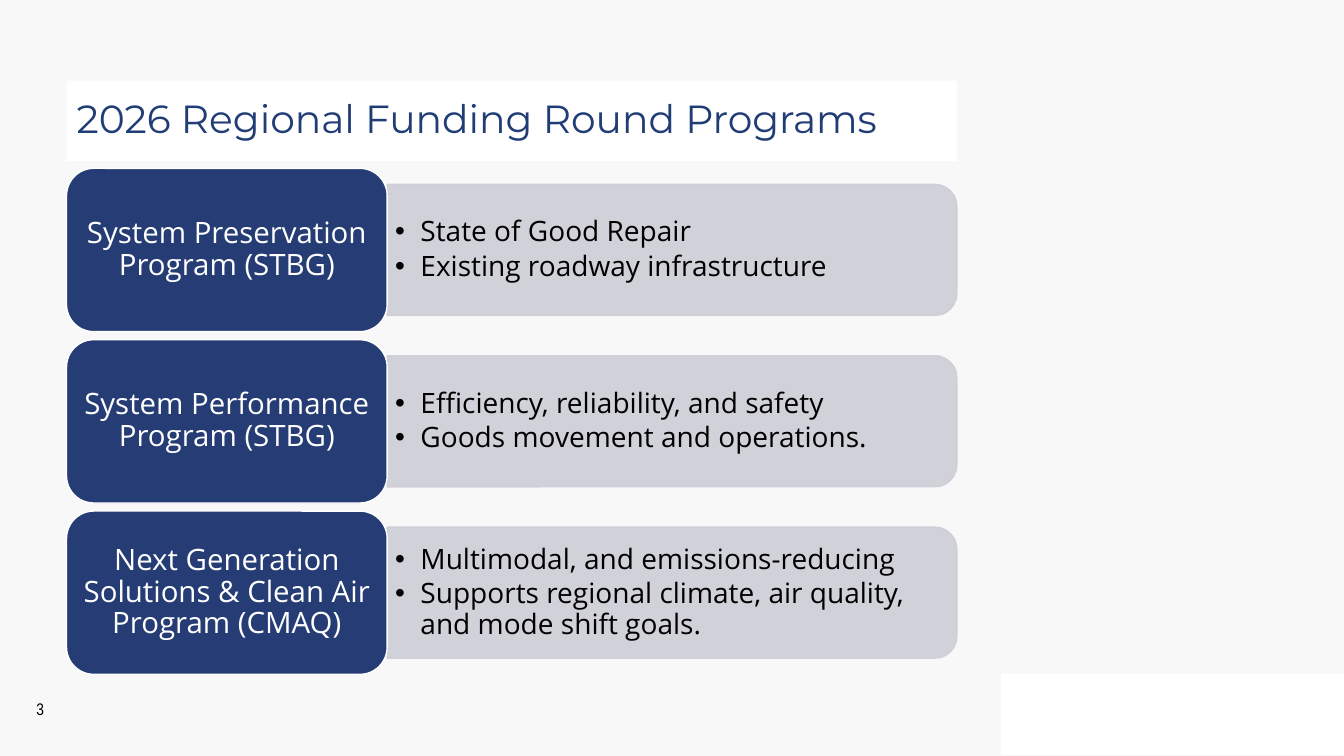
from lxml.etree import SubElement
from pptx import Presentation
from pptx.dml.color import RGBColor
from pptx.enum.shapes import MSO_SHAPE
from pptx.enum.text import MSO_ANCHOR, MSO_AUTO_SIZE, PP_ALIGN
from pptx.oxml.ns import qn
from pptx.util import Inches, Pt

COLORS = {
    "back": "F8F8F8",
    "white": "FFFFFF",
    "black": "000000",
    "title": "213D75",
    "label": "263C74",
    "bar": "CDCED6",
}
FONTS = {
    "title": {"name": "Montserrat", "size": Pt(28), "bold": False},
    "label": {"name": "Open Sans", "size": Pt(21), "bold": False},
    "list": {"name": "Open Sans", "size": Pt(20), "bold": False},
    "number": {"name": "Arial Narrow", "size": Pt(12), "bold": False},
}
PARAGRAPHS = {
    "title": {"alignment": PP_ALIGN.LEFT, "line_spacing": 0.9},
    "label": {"alignment": PP_ALIGN.CENTER, "line_spacing": 0.9},
    "list": {"alignment": PP_ALIGN.LEFT, "line_spacing": 0.9,
             "space_before": Pt(0), "space_after": Pt(3)},
    "number": {"alignment": PP_ALIGN.CENTER},
}
PROGRAMS = [
    ("System Preservation Program (STBG)",
     ["State of Good Repair", "Existing roadway infrastructure"]),
    ("System Performance Program (STBG)",
     ["Efficiency, reliability, and safety", "Goods movement and operations."]),
    ("Next Generation Solutions & Clean Air Program (CMAQ)",
     ["Multimodal, and emissions-reducing",
      "Supports regional climate, air quality, and mode shift goals."]),
]

# Layout in inches
LEFT, LABEL_W, LABEL_H = 0.66, 3.18, 1.62
BAR_W, BAR_H = 5.65, 1.3
LIST_W, LIST_H = 5.59, 1.17
FIRST_TOP, STEP = 1.67, 1.7


def apply(obj, values):
    for name, value in values.items():
        setattr(obj, name, value)


def rgb(name):
    return RGBColor.from_string(COLORS[name])


def set_alpha(fill, percent):
    """Make every solid colour below the given element translucent."""
    for clr in fill.iter(qn("a:srgbClr")):
        SubElement(clr, qn("a:alpha"), val=str(percent * 1000))


class SlideBuilder:
    def __init__(self, prs, layout):
        self.s = prs.slides.add_slide(prs.slide_layouts[layout])
        self.s.background.fill.solid()
        self.s.background.fill.fore_color.rgb = rgb("back")

    def place(self, sp, box):
        apply(sp, dict(zip(("left", "top", "width", "height"), map(Inches, box))))

    def frame(self, sp, inset=(0.1, 0.05)):
        x, y = map(Inches, inset)
        tf = sp.text_frame
        apply(tf, {"word_wrap": True, "auto_size": MSO_AUTO_SIZE.NONE,
                   "vertical_anchor": MSO_ANCHOR.MIDDLE,
                   "margin_left": x, "margin_right": x,
                   "margin_top": y, "margin_bottom": y})
        return tf

    def add_text(self, p, text, style, color):
        apply(p, PARAGRAPHS[style])
        r = p.add_run()
        r.text = text
        apply(r.font, FONTS[style])
        r.font.color.rgb = rgb(color)
        return r

    def shape(self, kind, box, fill, line=None):
        sp = self.s.shapes.add_shape(kind, *map(Inches, box))
        sp.shadow.inherit = False
        sp.fill.solid()
        sp.fill.fore_color.rgb = rgb(fill)
        if line:
            sp.line.color.rgb = rgb(line)
            sp.line.width = Pt(1)
        else:
            sp.line.fill.background()
        return sp

    def title(self, text, box):
        sp = self.s.shapes.title
        self.place(sp, box)
        sp.fill.solid()
        sp.fill.fore_color.rgb = rgb("white")
        self.add_text(self.frame(sp).paragraphs[0], text, "title", "title")

    def number(self, text, box):
        sp = self.s.shapes.add_textbox(*map(Inches, box))
        r = self.add_text(self.frame(sp).paragraphs[0], text, "number", "black")
        # Turn the run into a slide number field
        run = r._r
        run.tag = qn("a:fld")
        run.set("id", "{B6F15528-21DE-4FAA-801E-634DDDAF4B2B}")
        run.set("type", "slidenum")

    def bar(self, box):
        """Bar with rounded right corners: a top-rounded shape turned by 90 degrees."""
        x, y, w, h = box
        turned = (x + (w - h) / 2, y + (h - w) / 2, h, w)
        sp = self.shape(MSO_SHAPE.ROUND_2_SAME_RECTANGLE, turned, "bar", "bar")
        sp.rotation = 90
        set_alpha(sp._element.spPr, 90)

    def label(self, text, box):
        sp = self.shape(MSO_SHAPE.ROUNDED_RECTANGLE, box, "label", "white")
        tf = self.frame(sp, (0.09, 0.04))
        self.add_text(tf.paragraphs[0], text, "label", "white")

    def bullets(self, idx, items, box):
        sp = self.s.placeholders[idx]
        sp._element.getparent().append(sp._element)  # bring in front of the bar
        self.place(sp, box)
        tf = self.frame(sp, (0.08, 0.04))
        for i, item in enumerate(items):
            p = tf.add_paragraph() if i else tf.paragraphs[0]
            pPr = p._p.get_or_add_pPr()
            pPr.set("marL", str(Inches(0.25)))
            pPr.set("indent", str(-Inches(0.25)))
            SubElement(pPr, qn("a:buChar"), char="•")
            self.add_text(p, item, "list", "black")

    def drop_empty(self):
        for sp in list(self.s.placeholders):
            if not sp.text_frame.text:
                sp._element.getparent().remove(sp._element)


def main():
    prs = Presentation()
    prs.slide_width, prs.slide_height = Inches(13.33), Inches(7.5)
    # A slide number field shows the position, so numbering starts at 3
    prs.element.set("firstSlideNum", "3")
    b = SlideBuilder(prs, layout=4)

    # Footer and title
    b.shape(MSO_SHAPE.FLOWCHART_PROCESS, (9.93, 6.69, 3.41, 0.8), "white")
    b.number("3", (0.18, 6.83, 0.44, 0.4))
    b.title("2026 Regional Funding Round Programs", (LEFT, 0.8, 8.83, 0.8))

    # One row per program: bar, list, label
    right = LEFT + LABEL_W
    for i, (name, items) in enumerate(PROGRAMS):
        top = FIRST_TOP + i * STEP
        middle = top + LABEL_H / 2
        b.bar((right, middle - BAR_H / 2, BAR_W, BAR_H))
        b.bullets(i + 1, items, (right, middle - LIST_H / 2, LIST_W, LIST_H))
        b.label(name, (LEFT, top, LABEL_W, LABEL_H))

    b.drop_empty()
    prs.save("out.pptx")


if __name__ == "__main__":
    main()
